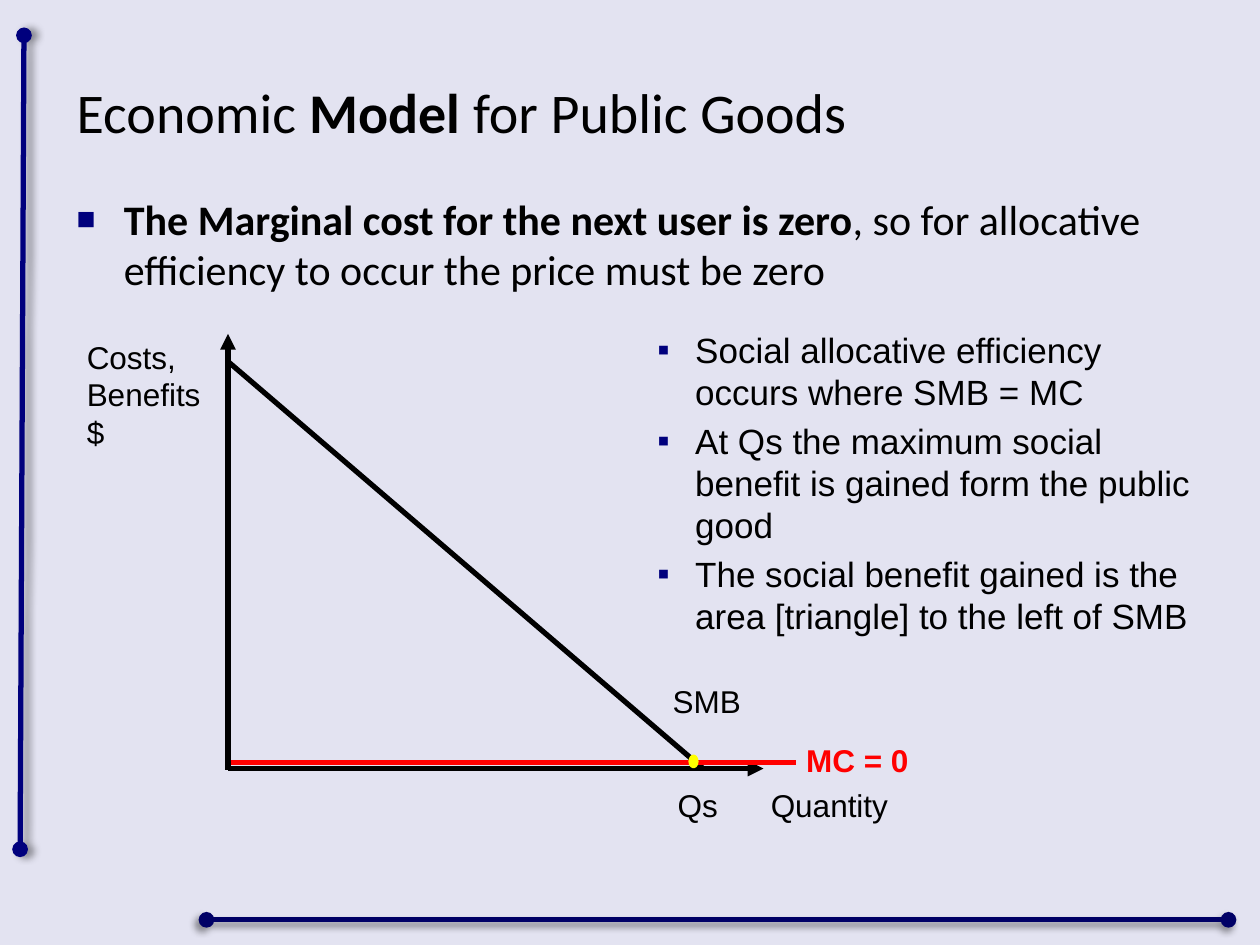
from dataclasses import dataclass
from typing import Optional

from lxml import etree
from pptx import Presentation
from pptx.dml.color import RGBColor
from pptx.enum.shapes import MSO_CONNECTOR, MSO_SHAPE
from pptx.enum.text import MSO_ANCHOR
from pptx.oxml.ns import qn
from pptx.util import Pt

STRAIGHT = MSO_CONNECTOR.STRAIGHT
OVAL = MSO_SHAPE.OVAL
TOP, MIDDLE = MSO_ANCHOR.TOP, MSO_ANCHOR.MIDDLE

BLACK, NAVY, DARK_NAVY = "000000", "00007D", "000066"
RED, YELLOW, LAVENDER = "FF0000", "FFFF00", "E3E3F1"
HEADING_FONT, LABEL_FONT = "Calibri", "Arial"


@dataclass(frozen=True)
class Line:
    start: tuple[float, float]
    end: tuple[float, float]
    color: str = BLACK
    head: Optional[str] = None
    tail: Optional[str] = None
    shadow_angle: Optional[int] = None


@dataclass(frozen=True)
class Label:
    text: str
    box: tuple[float, float, float, float]
    color: str = BLACK
    bold: bool = False


@dataclass(frozen=True)
class Bullet:
    char: str
    hanging: float
    percent: int


ORIGIN_X, AXIS_Y, MC_Y = 130.3, 439.2, 435.6

FRAME_LINES = [
    Line((13.7, 20.2), (11.5, 485.3), NAVY, "oval", "oval", 0),
    Line((118, 525.6), (702, 525.6), DARK_NAVY, "oval", "oval", 135),
]
GRAPH_LINES = [
    Line((ORIGIN_X, 440), (ORIGIN_X, 190.8), tail="triangle"),
    Line((ORIGIN_X, AXIS_Y), (436.3, AXIS_Y), tail="triangle"),
    Line((ORIGIN_X, 206.6), (401.8, AXIS_Y)),
    Line((131.8, MC_Y), (455, MC_Y), RED),
]
GRAPH_LABELS = [
    Label("Costs, Benefits\n$", (42.5, 189.4, 85.7, 72.7)),
    Label("SMB", (377.3, 386, 85, 29)),
    Label("Qs", (380.2, 445.7, 50, 29)),
    Label("Quantity", (433.4, 445.7, 105, 29)),
    Label("MC = 0", (453.6, 419.8, 85, 29), RED, True),
]
EFFICIENCY_POINTS = [
    "Social allocative efficiency occurs where SMB = MC",
    "At Qs the maximum social benefit is gained form the public good",
    "The social benefit gained is the area [triangle] to the left of SMB",
]


def rgb(color: str) -> RGBColor:
    return RGBColor.from_string(color)


def add_bullet(paragraph, bullet: Bullet) -> None:
    properties = paragraph._p.get_or_add_pPr()
    indent = Pt(bullet.hanging)
    properties.set("marL", str(indent))
    properties.set("indent", str(-indent))
    color = etree.SubElement(properties, qn("a:buClr"))
    etree.SubElement(color, qn("a:srgbClr"), val=NAVY)
    etree.SubElement(properties, qn("a:buSzPct"), val=str(bullet.percent * 1000))
    etree.SubElement(properties, qn("a:buFont"), typeface=LABEL_FONT)
    etree.SubElement(properties, qn("a:buChar"), char=bullet.char)


def add_text(slide, text: str, box: tuple[float, float, float, float], *,
             size: float, font: str = LABEL_FONT, color: str = BLACK,
             bold: bool = False, anchor=TOP, gap: float = 0,
             bullet: Optional[Bullet] = None) -> None:
    """Add a paragraph per line; text between ** marks switches boldness."""
    frame = slide.shapes.add_textbox(*map(Pt, box)).text_frame
    frame.word_wrap = True
    frame.vertical_anchor = anchor
    for index, line in enumerate(text.split("\n")):
        paragraph = frame.add_paragraph() if index else frame.paragraphs[0]
        if index:
            paragraph.space_before = Pt(gap)
        if bullet:
            add_bullet(paragraph, bullet)
        paragraph.font.size = Pt(size)
        for part, words in enumerate(line.split("**")):
            if not words:
                continue
            run = paragraph.add_run()
            run.text = words
            run.font.name = font
            run.font.size = Pt(size)
            run.font.color.rgb = rgb(color)
            run.font.bold = bold != (part % 2 == 1)


def add_line(slide, line: Line) -> None:
    connector = slide.shapes.add_connector(
        STRAIGHT, *map(Pt, (*line.start, *line.end)))
    connector.line.color.rgb = rgb(line.color)
    connector.line.width = Pt(3)
    outline = connector.line._get_or_add_ln()
    for tag, kind in (("a:headEnd", line.head), ("a:tailEnd", line.tail)):
        if kind:
            etree.SubElement(outline, qn(tag), type=kind)
    effects = etree.SubElement(connector._element.spPr, qn("a:effectLst"))
    if line.shadow_angle is not None:
        shadow = etree.SubElement(
            effects, qn("a:outerShdw"), blurRad=str(Pt(4)), dist=str(Pt(3)),
            dir=str(line.shadow_angle * 60000), rotWithShape="0")
        color = etree.SubElement(shadow, qn("a:srgbClr"), val=BLACK)
        etree.SubElement(color, qn("a:alpha"), val="40000")


def add_equilibrium(slide) -> None:
    point = slide.shapes.add_shape(OVAL, *map(Pt, (394.4, 432.2, 3.8, 5.8)))
    point.shadow.inherit = False
    point.fill.solid()
    point.fill.fore_color.rgb = rgb(YELLOW)
    point.line.color.rgb = rgb(YELLOW)
    point.line.width = Pt(2)


def main() -> None:
    deck = Presentation()
    deck.slide_width, deck.slide_height = Pt(720), Pt(540)
    slide = deck.slides.add_slide(deck.slide_layouts[6])
    slide.background.fill.solid()
    slide.background.fill.fore_color.rgb = rgb(LAVENDER)

    for line in FRAME_LINES:
        add_line(slide, line)
    add_text(slide, "Economic **Model** for Public Goods",
             (36.7, 20.9, 646.6, 85), size=32, font=HEADING_FONT, anchor=MIDDLE)
    add_text(slide, "**The Marginal cost for the next user is zero**, so for "
             "allocative efficiency to occur the price must be zero",
             (36.7, 107, 663, 70), size=24, font=HEADING_FONT,
             bullet=Bullet("■", 27, 75))
    add_text(slide, "\n".join(EFFICIENCY_POINTS), (368.6, 184, 331.2, 190),
             size=20, gap=4, bullet=Bullet("▪", 21.6, 100))
    for line in GRAPH_LINES:
        add_line(slide, line)
    for label in GRAPH_LABELS:
        add_text(slide, label.text, label.box, size=18, color=label.color,
                 bold=label.bold)
    add_equilibrium(slide)
    deck.save("out.pptx")


if __name__ == "__main__":
    main()
